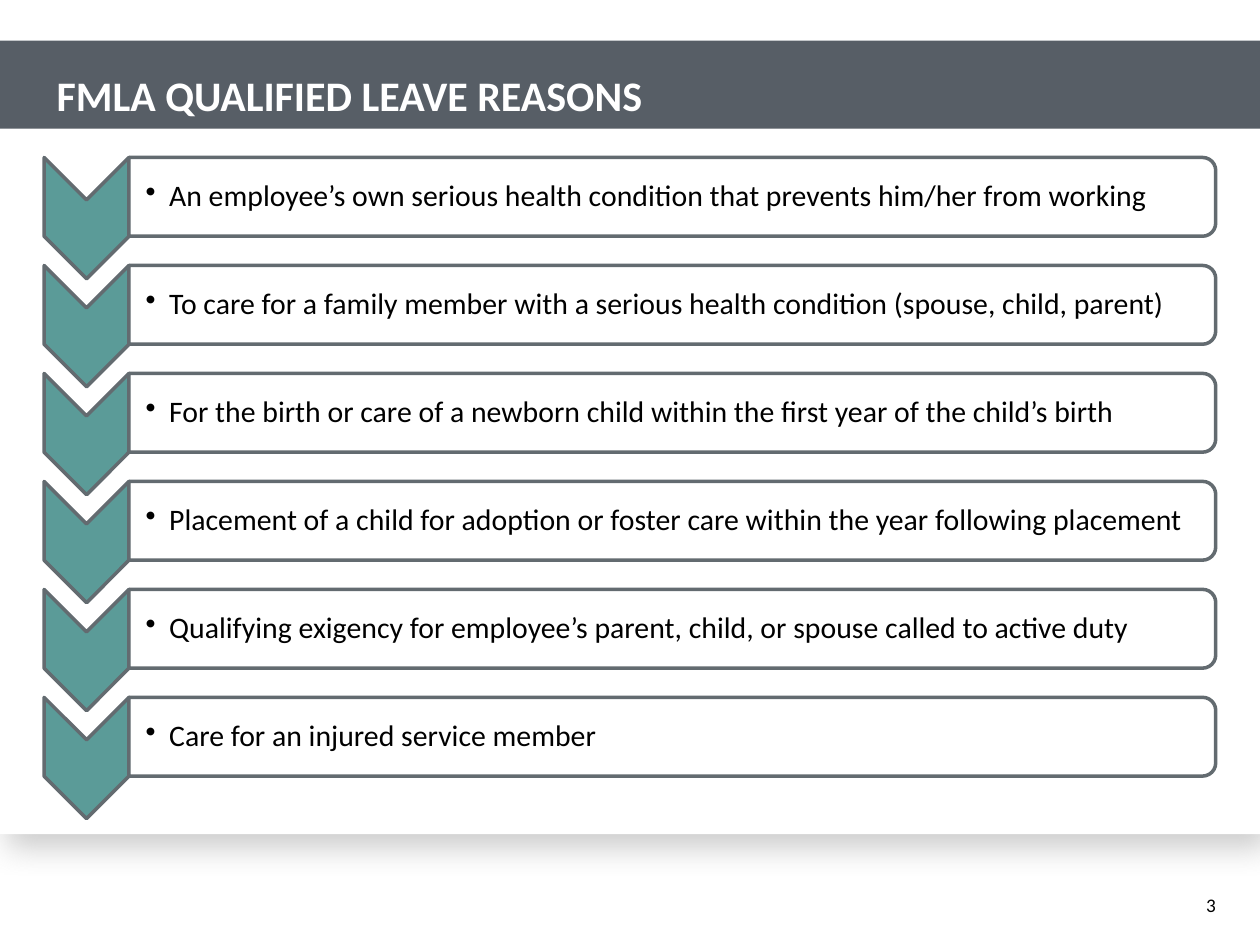
from dataclasses import dataclass

from lxml.etree import SubElement
from pptx import Presentation
from pptx.dml.color import RGBColor
from pptx.enum.shapes import MSO_SHAPE
from pptx.enum.text import MSO_ANCHOR, MSO_AUTO_SIZE, PP_ALIGN
from pptx.oxml.ns import qn
from pptx.util import Pt


@dataclass(frozen=True)
class Theme:
    font: str = "Calibri"
    white: str = "FFFFFF"
    black: str = "000000"
    banner: str = "575E66"
    arrow: str = "5B9B98"
    outline: str = "636B70"
    shadow: str = "808080"
    title_size: float = 24
    item_size: float = 17
    number_size: float = 11


class SlideBuilder:
    def __init__(self, page, theme):
        self.page = page
        self.theme = theme

    def style_text(self, paragraph, size, color, bold=False):
        paragraph.font.name = self.theme.font
        paragraph.font.size = Pt(size)
        paragraph.font.bold = bold
        paragraph.font.color.rgb = RGBColor.from_string(color)

    def set_frame(self, frame, anchor, insets):
        frame.word_wrap = True
        frame.auto_size = MSO_AUTO_SIZE.NONE
        frame.vertical_anchor = anchor
        frame.margin_left, frame.margin_top, frame.margin_right, frame.margin_bottom = map(Pt, insets)

    def shape(self, kind, left, top, width, height, fill, outlined=False):
        shape = self.page.shapes.add_shape(kind, Pt(left), Pt(top), Pt(width), Pt(height))
        shape.shadow.inherit = False
        shape.fill.solid()
        shape.fill.fore_color.rgb = RGBColor.from_string(fill)
        if outlined:
            shape.line.color.rgb = RGBColor.from_string(self.theme.outline)
            shape.line.width = Pt(2)
        else:
            shape.line.fill.background()
        return shape

    def turned_shape(self, kind, left, top, width, height, fill):
        shift = (width - height) / 2
        shape = self.shape(kind, left + shift, top - shift, height, width, fill, outlined=True)
        shape.rotation = 90
        return shape

    def panel(self, left, top, width, height):
        panel = self.turned_shape(MSO_SHAPE.ROUND_2_SAME_RECTANGLE, left, top, width, height, self.theme.white)
        color = panel.fill._xPr.find(qn("a:solidFill"))[0]
        SubElement(color, qn("a:alpha"), val="90000")

    def drop_shadow(self, shape):
        effects = shape._element.spPr.find(qn("a:effectLst"))
        shadow = SubElement(
            effects, qn("a:outerShdw"), blurRad=str(Pt(17.5)), dist=str(Pt(9)),
            dir=str(60 * 60000), algn="tl", rotWithShape="0",
        )
        color = SubElement(shadow, qn("a:srgbClr"), val=self.theme.shadow)
        SubElement(color, qn("a:alpha"), val="40000")

    def title(self, text, left, top, width, height):
        title = self.page.shapes.title
        title.left, title.top, title.width, title.height = map(Pt, (left, top, width, height))
        self.set_frame(title.text_frame, MSO_ANCHOR.BOTTOM, (7.2, 3.6, 7.2, 3.6))
        paragraph = title.text_frame.paragraphs[0]
        paragraph.text = text
        paragraph.alignment = PP_ALIGN.LEFT
        paragraph.line_spacing = Pt(24)
        self.style_text(paragraph, self.theme.title_size, self.theme.white, bold=True)
        self.page.shapes._spTree.append(title._element)

    def text_box(self, text, left, top, width, height, anchor, insets, size):
        box = self.page.shapes.add_textbox(Pt(left), Pt(top), Pt(width), Pt(height))
        self.set_frame(box.text_frame, anchor, insets)
        paragraph = box.text_frame.paragraphs[0]
        paragraph.text = text
        self.style_text(paragraph, size, self.theme.black)
        return paragraph

    def bullet_box(self, text, left, top, width, height):
        paragraph = self.text_box(
            text, left, top, width, height, MSO_ANCHOR.MIDDLE, (9.5, 0.8, 0.8, 0.8), self.theme.item_size
        )
        paragraph.line_spacing = 0.9
        properties = paragraph._p.get_or_add_pPr()
        properties.set("marL", str(Pt(13.5)))
        properties.set("indent", str(-Pt(13.5)))
        bullet = properties.makeelement(qn("a:buChar"), {"char": "•"})
        properties.find(qn("a:defRPr")).addprevious(bullet)

    def page_number(self, text, left, top, width, height):
        paragraph = self.text_box(
            text, left, top, width, height, MSO_ANCHOR.BOTTOM, (7.2, 0, 0, 0), self.theme.number_size
        )
        paragraph.alignment = PP_ALIGN.RIGHT


REASONS = [
    "An employee’s own serious health condition that prevents him/her from working",
    "To care for a family member with a serious health condition (spouse, child, parent)",
    "For the birth or care of a newborn child within the first year of the child’s birth",
    "Placement of a child for adoption or foster care within the year following placement",
    "Qualifying exigency for employee’s parent, child, or spouse called to active duty",
    "Care for an injured service member",
]


def main():
    deck = Presentation()
    deck.slide_width, deck.slide_height = Pt(720), Pt(540)
    theme = Theme()
    builder = SlideBuilder(deck.slides.add_slide(deck.slide_layouts[5]), theme)

    content = builder.shape(MSO_SHAPE.RECTANGLE, 0, 73.5, 720, 403.2, theme.white)
    builder.drop_shadow(content)
    builder.shape(MSO_SHAPE.RECTANGLE, 0, 23.2, 720, 50.4, theme.banner)
    builder.page_number("3", 658.8, 509, 36, 14.4)
    builder.title("FMLA QUALIFIED LEAVE REASONS", 25.2, 36, 669.6, 36)

    first_top, step = 90, 61.7
    arrow_left, arrow_width, arrow_height = 25.2, 48.5, 69.3
    panel_left, panel_width, panel_height = arrow_left + arrow_width, 621, 45
    for index, reason in enumerate(REASONS):
        top = first_top + index * step
        builder.turned_shape(MSO_SHAPE.CHEVRON, arrow_left, top, arrow_width, arrow_height, theme.arrow)
        builder.panel(panel_left, top, panel_width, panel_height)
        builder.bullet_box(reason, panel_left, top + 2.2, panel_width - 2.2, panel_height - 4.4)

    deck.save("out.pptx")


if __name__ == "__main__":
    main()
